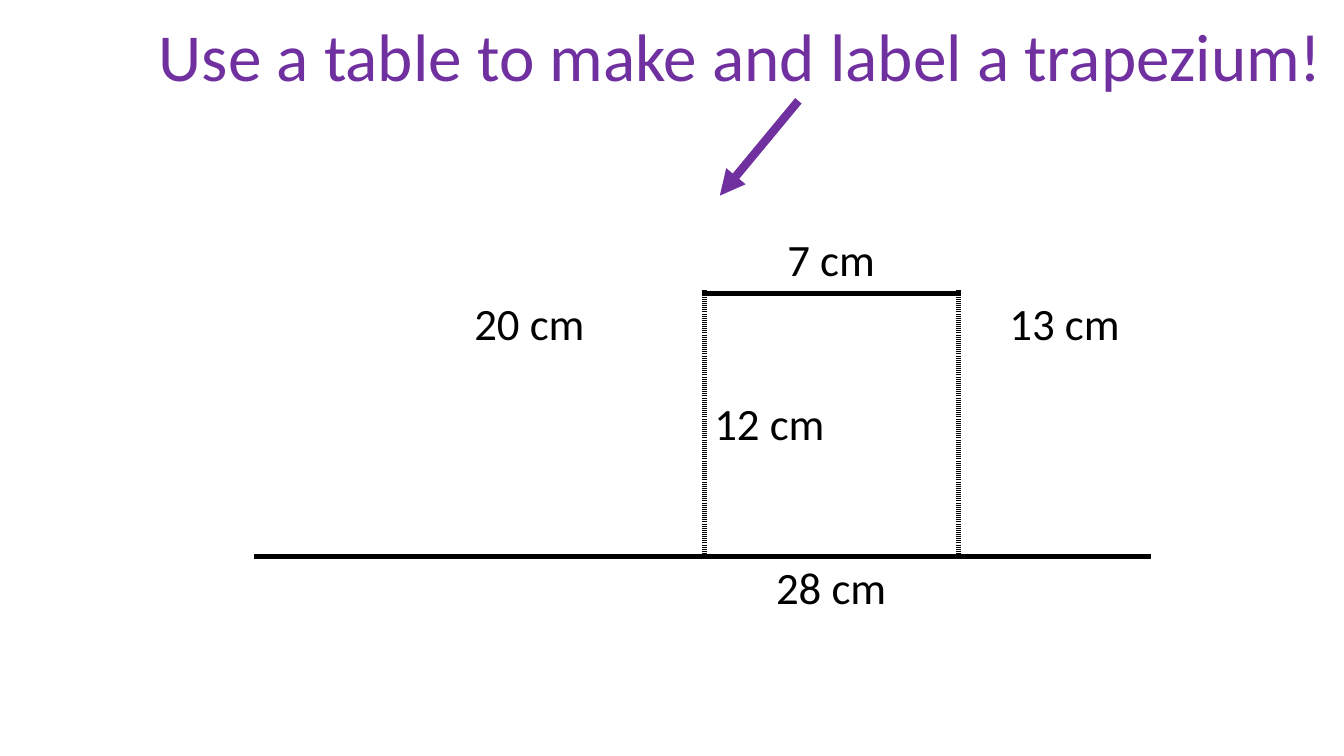
from lxml import etree
from pptx import Presentation
from pptx.dml.color import RGBColor
from pptx.enum.dml import MSO_LINE
from pptx.enum.shapes import MSO_CONNECTOR
from pptx.enum.text import MSO_ANCHOR, MSO_AUTO_SIZE, PP_ALIGN
from pptx.oxml.ns import qn
from pptx.util import Cm, Pt

PURPLE = RGBColor(0x70, 0x30, 0xA0)
BLACK = RGBColor(0, 0, 0)
BORDER_WIDTH = Pt(4.5)

TITLE = "Use a table to make and label a trapezium!"
TITLE_BOX = (3.61, 0.23, 30.12, 2.31)
ARROW = (20.12, 2.54, 18.14, 4.93)
TABLE_ORIGIN = (6.4, 5.56)
COLUMNS = [11.35, 6.4, 4.85]
ROWS = [1.83, 6.63, 3.35]
LABELS = {
    (0, 1): ("7 cm", PP_ALIGN.CENTER, MSO_ANCHOR.BOTTOM, 0.25),
    (1, 0): ("20 cm", PP_ALIGN.CENTER, MSO_ANCHOR.TOP, 2.79),
    (1, 1): ("12 cm", PP_ALIGN.LEFT, MSO_ANCHOR.MIDDLE, 0.25),
    (1, 2): ("13 cm", PP_ALIGN.CENTER, MSO_ANCHOR.TOP, 0.76),
    (2, 1): ("28 cm", PP_ALIGN.CENTER, MSO_ANCHOR.TOP, 0.25),
}
HORIZONTAL_EDGES = {(1, 1): "solid", (2, 0): "solid", (2, 1): "solid", (2, 2): "solid"}
VERTICAL_EDGES = {(1, 1): "sysDot", (1, 2): "sysDot"}


def apply(target, **values):
    for name, value in values.items():
        setattr(target, name, value)


def write(tf, text, align, size, color):
    p = tf.paragraphs[0]
    p.alignment = align
    r = p.add_run()
    r.text = text
    apply(r.font, name="Calibri", size=Pt(size), bold=False)
    r.font.color.rgb = color


def add_border(tcPr, side, dash):
    ln = etree.SubElement(tcPr, qn(f"a:{side}"))
    if dash is None:
        ln.set("w", "0")
        etree.SubElement(ln, qn("a:noFill"))
        return
    ln.set("w", str(BORDER_WIDTH))
    fill = etree.SubElement(ln, qn("a:solidFill"))
    etree.SubElement(fill, qn("a:srgbClr"), val=str(BLACK))
    etree.SubElement(ln, qn("a:prstDash"), val=dash)


def add_title(s):
    sp = s.shapes.title
    apply(sp, **dict(zip(("left", "top", "width", "height"), map(Cm, TITLE_BOX))))
    tf = sp.text_frame
    apply(tf, word_wrap=True, auto_size=MSO_AUTO_SIZE.NONE, vertical_anchor=MSO_ANCHOR.TOP)
    write(tf, TITLE, PP_ALIGN.CENTER, 48, PURPLE)


def add_arrow(s):
    arrow = s.shapes.add_connector(MSO_CONNECTOR.STRAIGHT, *map(Cm, ARROW))
    apply(arrow.line, width=Pt(6), dash_style=MSO_LINE.SOLID)
    arrow.line.color.rgb = PURPLE
    ln = arrow.line._get_or_add_ln()
    etree.SubElement(ln, qn("a:tailEnd"), type="triangle")
    etree.SubElement(arrow._element.spPr, qn("a:effectLst"))


def add_trapezium(s):
    size = (sum(COLUMNS), sum(ROWS))
    frame = s.shapes.add_table(len(ROWS), len(COLUMNS), *map(Cm, TABLE_ORIGIN + size))
    table = frame.table
    apply(table, first_row=False, horz_banding=False)
    for column, width in zip(table.columns, COLUMNS):
        column.width = Cm(width)
    for row, height in zip(table.rows, ROWS):
        row.height = Cm(height)
    for i in range(len(ROWS)):
        for j in range(len(COLUMNS)):
            cell = table.cell(i, j)
            tcPr = cell._tc.get_or_add_tcPr()
            add_border(tcPr, "lnL", VERTICAL_EDGES.get((i, j)))
            add_border(tcPr, "lnR", VERTICAL_EDGES.get((i, j + 1)))
            add_border(tcPr, "lnT", HORIZONTAL_EDGES.get((i, j)))
            add_border(tcPr, "lnB", HORIZONTAL_EDGES.get((i + 1, j)))
            cell.fill.background()
            if (i, j) in LABELS:
                text, align, anchor, indent = LABELS[i, j]
                apply(cell, vertical_anchor=anchor, margin_left=Cm(indent))
                write(cell.text_frame, text, align, 32, BLACK)


def main():
    prs = Presentation()
    apply(prs, slide_width=Cm(33.87), slide_height=Cm(19.05))
    s = prs.slides.add_slide(prs.slide_layouts[5])
    add_title(s)
    add_arrow(s)
    add_trapezium(s)
    prs.save("out.pptx")


if __name__ == "__main__":
    main()
